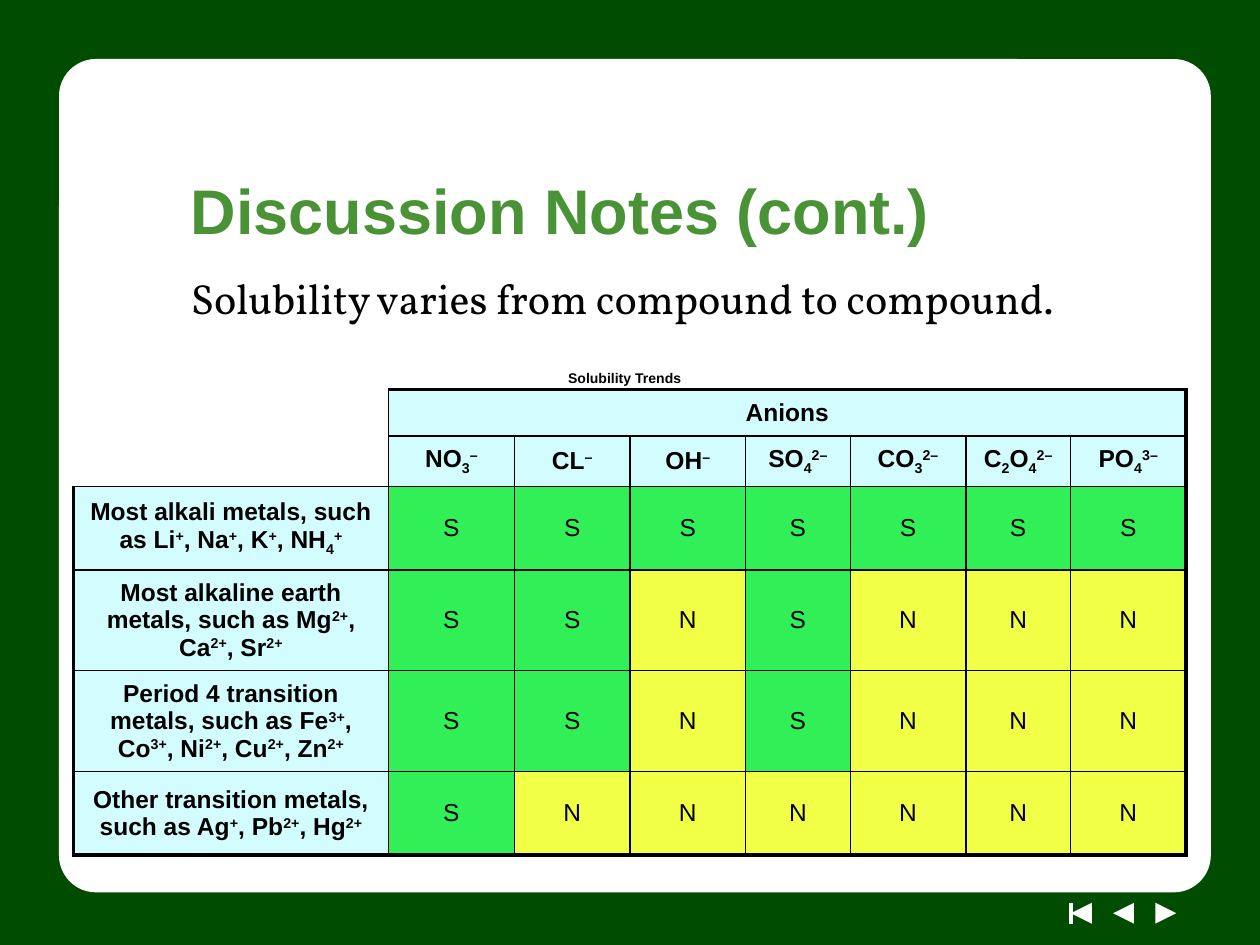
from lxml import etree
from pptx import Presentation
from pptx.dml.color import RGBColor
from pptx.enum.shapes import MSO_CONNECTOR, MSO_SHAPE
from pptx.enum.text import MSO_ANCHOR, PP_ALIGN
from pptx.oxml.ns import qn
from pptx.util import Cm, Pt

RECT, ROUND = MSO_SHAPE.RECTANGLE, MSO_SHAPE.ROUNDED_RECTANGLE
TRIANGLE = MSO_SHAPE.ISOSCELES_TRIANGLE
TOP, MIDDLE = MSO_ANCHOR.TOP, MSO_ANCHOR.MIDDLE
LEFT, CENTER = PP_ALIGN.LEFT, PP_ALIGN.CENTER

DARK, WHITE, BLACK = "004C01", "FFFFFF", "000000"
TITLE_GREEN, HEAD_FILL = "499235", "D3FCFF"
ANSWER_FILL = {"S": "31EF56", "N": "F1FF46"}
BASELINE = {"_": "-25000", "^": "30000"}

TEXTS = [
    ("Discussion Notes (cont.)", (3.6, 2.96, 20.52, 2.54),
     36, "Arial", TITLE_GREEN, True, LEFT, MIDDLE),
    ("Solubility varies from compound to compound.", (3.6, 5.36, 19.69, 10.8),
     24, "Vollkorn", BLACK, False, LEFT, TOP),
    ("Solubility Trends", (1.48, 7.19, 22.23, 0.84),
     8, "Arial", BLACK, True, CENTER, MIDDLE),
]
ANIONS = ["NO|_3|^–", "CL|^–", "OH|^–", "SO|_4|^2–", "CO|_3|^2–",
          "C|_2|O|_4|^2–", "PO|_4|^3–"]
METALS = [
    ("Most alkali metals, such as Li|^+|, Na|^+|, K|^+|, NH|_4|^+", "SSSSSSS"),
    ("Most alkaline earth metals, such as Mg|^2+|, Ca|^2+|, Sr|^2+", "SSNSNNN"),
    ("Period 4 transition metals, such as Fe|^3+|, Co|^3+|, Ni|^2+|, Cu|^2+|, Zn|^2+",
     "SSNSNNN"),
    ("Other transition metals, such as Ag|^+|, Pb|^2+|, Hg|^2+", "SNNNNNN"),
]
COLS = [6.35, 2.54, 2.33, 2.33, 2.11, 2.33, 2.11, 2.33]
ROWS = [0.94, 0.94, 1.68, 2.03, 2.03, 1.68]
NAV_X, NAV_Y, NAV_STEP, NAV_SIZE = 21.59, 18.2, 0.85, 0.42
NAV_ROTATIONS = [270, 270, 90]


def rgb(value):
    return RGBColor.from_string(value)


def add_block(kind, box, color, rotation=0):
    sp = s.shapes.add_shape(kind, *map(Cm, box))
    sp.shadow.inherit = False
    sp.fill.solid()
    sp.fill.fore_color.rgb = rgb(color)
    sp.line.fill.background()
    sp.rotation = rotation
    return sp


def style_run(r, size, font, color, bold):
    r.font.size, r.font.name, r.font.bold = Pt(size), font, bold
    r.font.color.rgb = rgb(color)


def add_text(text, box, size, font, color, bold, align, anchor):
    tf = s.shapes.add_textbox(*map(Cm, box)).text_frame
    tf.word_wrap, tf.vertical_anchor = True, anchor
    p = tf.paragraphs[0]
    p.text, p.alignment = text, align
    if anchor == TOP:
        p.space_before = Pt(3)
    style_run(p.runs[0], size, font, color, bold)


def set_borders(cell, widths):
    tcPr = cell._tc.get_or_add_tcPr()
    for i, (side, width) in enumerate(zip("LRTB", widths)):
        ln = etree.Element(qn(f"a:ln{side}"), w=str(Pt(width)))
        if width:
            fill = etree.SubElement(ln, qn("a:solidFill"))
            etree.SubElement(fill, qn("a:srgbClr"), val=BLACK)
        else:
            etree.SubElement(ln, qn("a:noFill"))
        tcPr.insert(i, ln)


def fill_cell(cell, markup, color, bold):
    cell.fill.solid()
    cell.fill.fore_color.rgb = rgb(color)
    cell.vertical_anchor = MIDDLE
    p = cell.text_frame.paragraphs[0]
    p.alignment = CENTER
    for part in markup.split("|"):
        r = p.add_run()
        r.text = part.lstrip("_^")
        style_run(r, 14, "Arial", BLACK, bold)
        if part[0] in BASELINE:
            r.font._element.set("baseline", BASELINE[part[0]])


def add_solubility_table():
    frame = s.shapes.add_table(len(ROWS), len(COLS), Cm(1.48), Cm(7.85),
                               Cm(sum(COLS)), Cm(sum(ROWS)))
    table = frame.table
    table.first_row = table.horz_banding = False
    for col, width in zip(table.columns, COLS):
        col.width = Cm(width)
    for row, height in zip(table.rows, ROWS):
        row.height = Cm(height)
    table.cell(0, 0).merge(table.cell(1, 0))
    table.cell(0, 1).merge(table.cell(0, len(COLS) - 1))

    fill_cell(table.cell(0, 1), "Anions", HEAD_FILL, True)
    for c, anion in enumerate(ANIONS, 1):
        fill_cell(table.cell(1, c), anion, HEAD_FILL, True)
    for i, (metal, answers) in enumerate(METALS, 2):
        fill_cell(table.cell(i, 0), metal, HEAD_FILL, True)
        for c, answer in enumerate(answers, 1):
            fill_cell(table.cell(i, c), answer, ANSWER_FILL[answer], False)

    last_row, last_col = len(ROWS) - 1, len(COLS) - 1
    for i in range(len(ROWS)):
        for c in range(len(COLS)):
            cell = table.cell(i, c)
            if c == 0 and i < 2:
                cell.fill.background()
                set_borders(cell, (0, 1, 0, i))
            else:
                set_borders(cell, (2.25 if c == 0 else 1,
                                   2.25 if c == last_col or (i, c) == (0, 1) else 1,
                                   2.25 if i == 0 else 1,
                                   2.25 if i == last_row else 1))


prs = Presentation()
prs.slide_width, prs.slide_height = Cm(25.4), Cm(19.05)
s = prs.slides.add_slide(prs.slide_layouts[6])

add_block(RECT, (0, 0, 25.4, 19.05), DARK)
for i, rotation in enumerate(NAV_ROTATIONS):
    add_block(TRIANGLE, (NAV_X + i * NAV_STEP, NAV_Y, NAV_SIZE, NAV_SIZE),
              WHITE, rotation)
bar = s.shapes.add_connector(MSO_CONNECTOR.STRAIGHT, Cm(NAV_X), Cm(NAV_Y),
                             Cm(NAV_X), Cm(NAV_Y + NAV_SIZE))
bar.line.color.rgb, bar.line.width = rgb(WHITE), Pt(2)
etree.SubElement(bar._element.spPr, qn("a:effectLst"))

panel = add_block(ROUND, (1.27, 1.27, 23.06, 16.64), WHITE)
panel.adjustments[0] = 0.04
panel.line.color.rgb, panel.line.width = rgb(WHITE), Pt(4.5)

for text in TEXTS:
    add_text(*text)
add_solubility_table()

prs.save("out.pptx")
